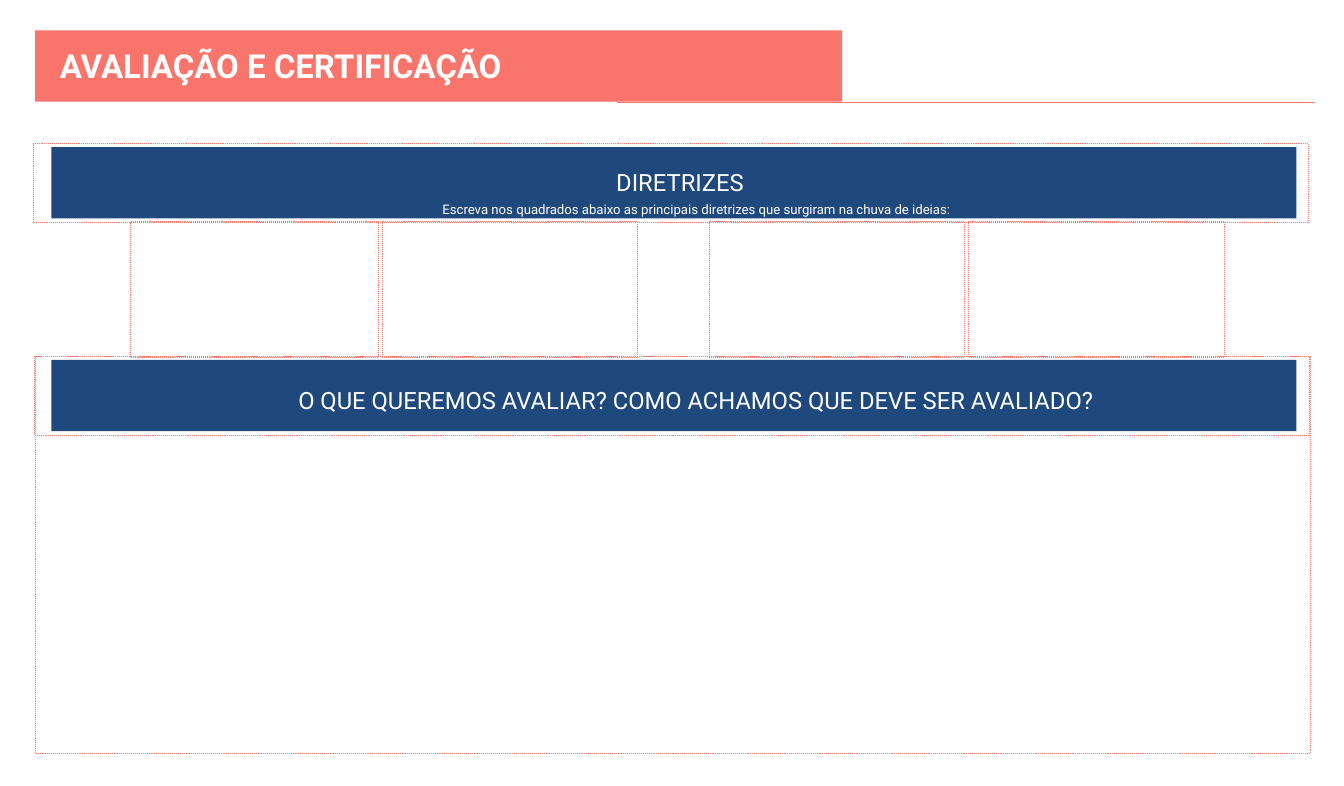
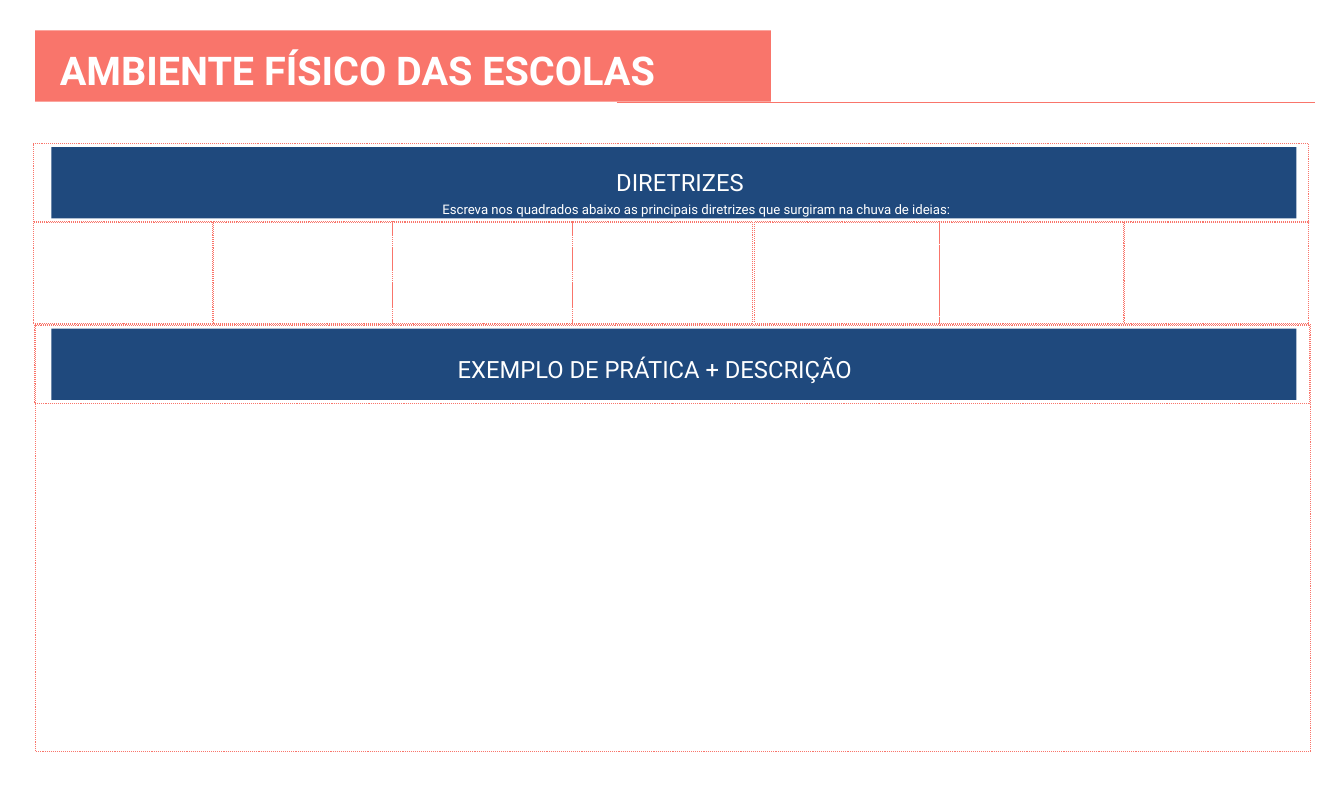
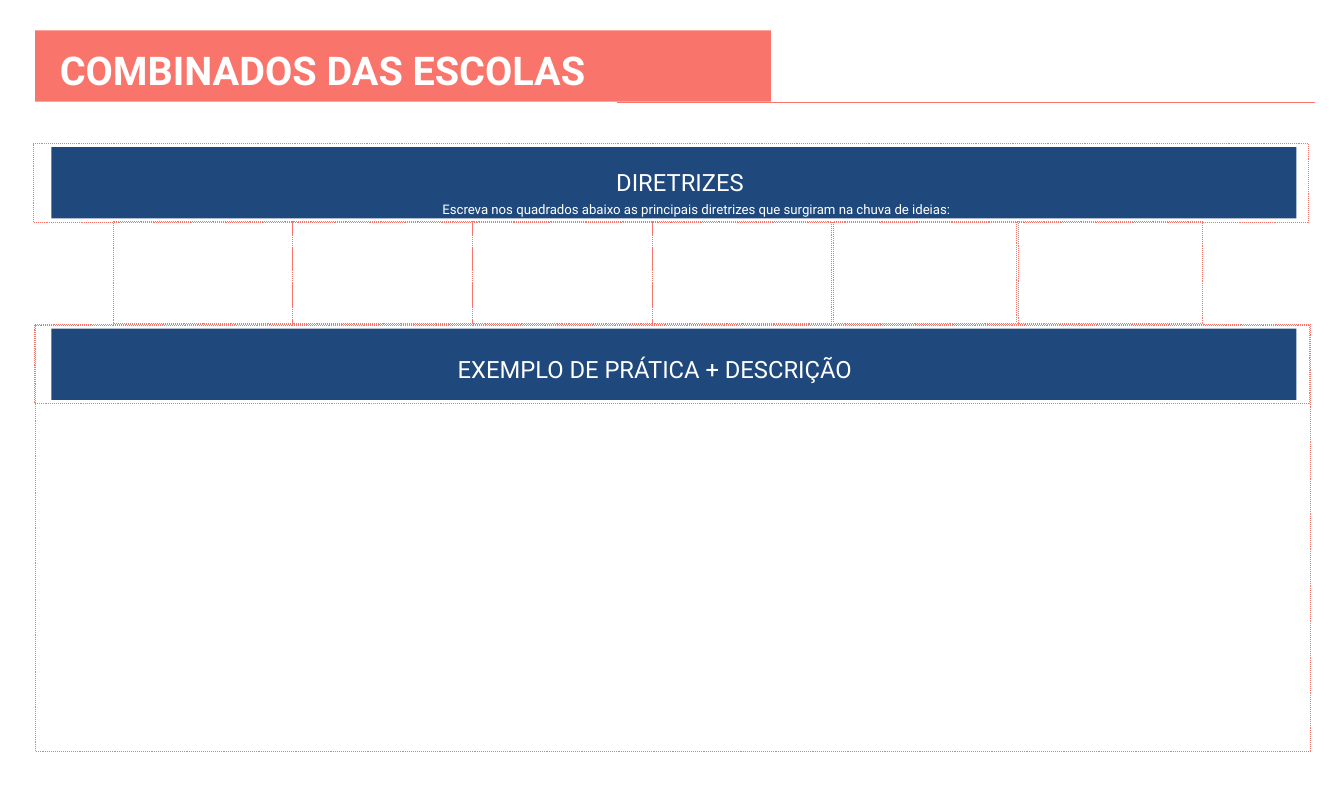
from pptx import Presentation
from pptx.dml.color import RGBColor as RGB
from pptx.enum.dml import MSO_LINE as Dash
from pptx.enum.shapes import MSO_CONNECTOR as Conn, MSO_SHAPE as Form
from pptx.enum.text import PP_ALIGN as Align
from pptx.oxml.ns import qn
from pptx.util import Inches, Pt

HUES = {"coral": "F9756B", "navy": "1F497D", "white": "FFFFFF"}
FONT = "Roboto"

deck = Presentation()
deck.slide_width, deck.slide_height = Inches(14.14), Inches(8.27)

# The grid has 100 columns and 100 rows.
COL, ROW = deck.slide_width / 100, deck.slide_height / 100

GUIDE = "DIRETRIZES"
HINT = "Escreva nos quadrados abaixo as principais diretrizes que surgiram na chuva de ideias:"
CASE = "EXEMPLO DE PRÁTICA + DESCRIÇÃO"
ASK = "O QUE QUEREMOS AVALIAR? COMO ACHAMOS QUE DEVE SER AVALIADO?"

FULL = 94.91            # width of the dotted frames
TOP, HIGH = 18.26, 10.04  # first band frame: top and height
PAD = 0.45              # frame edge to navy band
CELLS = 28.17           # top of the row of empty cells

# Text box of the lower band: left, width, then left, right and first-line indents
CASE_BOX = (2.48, 93.07, 1.98, 2.55, 0)
ASK_BOX = (16.12, 68.95, 1.98, 2.55, 2.97)

# Runs of cells: left, width, step, count
PAGES = [
    dict(title="AVALIAÇÃO E CERTIFICAÇÃO", size=25, tab=60.04,
         low=45.34, end=95.88, tall=17.29, ask=ASK, box=ASK_BOX,
         runs=[(9.69, 18.46, 0, 1), (28.43, 19.02, 0, 1), (52.76, 19.02, 19.31, 2)]),
    dict(title="AMBIENTE FÍSICO DAS ESCOLAS", size=30, tab=54.74,
         low=41.35, end=95.65, tall=12.94, ask=CASE, box=CASE_BOX,
         runs=[(2.48, 13.37, 13.37, 4), (56.15, 13.79, 13.72, 3)]),
    dict(title="COMBINADOS DAS ESCOLAS", size=30, tab=54.74,
         low=41.35, end=95.65, tall=12.94, ask=CASE, box=CASE_BOX,
         runs=[(8.42, 13.37, 13.37, 4), (62.02, 13.79, 13.65, 2)]),
]


def rect(x, y, w, h, fill=None):
    """Draw a filled band, or a dotted frame when no fill is given."""
    form = slide.shapes.add_shape(
        Form.RECTANGLE, int(x * COL), int(y * ROW), int(w * COL), int(h * ROW))
    form.shadow.inherit = False
    if fill:
        form.fill.solid()
        form.fill.fore_color.rgb = RGB.from_string(HUES[fill])
        form.line.fill.background()
    else:
        form.fill.background()
        form.line.color.rgb = RGB.from_string(HUES["coral"])
        form.line.width = Pt(0.75)
        form.line.dash_style = Dash.ROUND_DOT


def label(text, x, y, w, h, size, left=0.99, right=0.99, first=0, head=False):
    """Write white text: a bold title at left, or a centred band caption."""
    box = slide.shapes.add_textbox(int(x * COL), int(y * ROW), int(w * COL), int(h * ROW))
    frame = box.text_frame
    frame.word_wrap = True
    frame.margin_left = frame.margin_right = frame.margin_bottom = 0
    frame.margin_top = int((0.12 if head else 1.81) * ROW)
    frame.text = text
    para = frame.paragraphs[0]
    if not head:
        para.alignment = Align.CENTER
        para.line_spacing = 1.06
    props = para._p.get_or_add_pPr()
    for key, cols in (("marL", left), ("marR", right), ("indent", first)):
        props.set(key, str(int(cols * COL)))
    font = para.runs[0].font
    font.name, font.size, font.bold = FONT, Pt(size), head
    font.color.rgb = RGB.from_string(HUES["white"])


for page in PAGES:
    slide = deck.slides.add_slide(deck.slide_layouts[6])
    low = page["low"]

    # Title tab and rule
    rect(2.62, 3.87, page["tab"], 9.07, "coral")
    label(page["title"], 4.38, 5.68, 68.95, 8.34, page["size"], 0.07, 0, head=True)
    rule = slide.shapes.add_connector(
        Conn.STRAIGHT, int(45.9 * COL), int(13.06 * ROW), int(97.81 * COL), int(13.06 * ROW))
    rule.line.color.rgb = RGB.from_string(HUES["coral"])
    rule.line.width = Pt(0.75)
    rule._element.spPr.append(rule._element.spPr.makeelement(qn("a:effectLst"), {}))

    # Large answer area, then both framed bands
    rect(2.62, low, FULL, page["end"] - low)
    for x, y in ((2.48, TOP), (2.55, low)):
        rect(x, y, FULL, HIGH)
        rect(3.82, y + PAD, 92.64, 9.07, "navy")

    # Empty cells
    for start, wide, step, count in page["runs"]:
        for i in range(count):
            rect(start + i * step, CELLS, wide, page["tall"])

    # Captions
    label(GUIDE, 7.78, 19.35, 85.64, 6.65, 18)
    label(HINT, 8.98, 23.7, 85.64, 6.65, 10)
    x, wide, left, right, first = page["box"]
    label(page["ask"], x, low + 1.75, wide, 5.68, 18, left, right, first)

deck.save("out.pptx")
